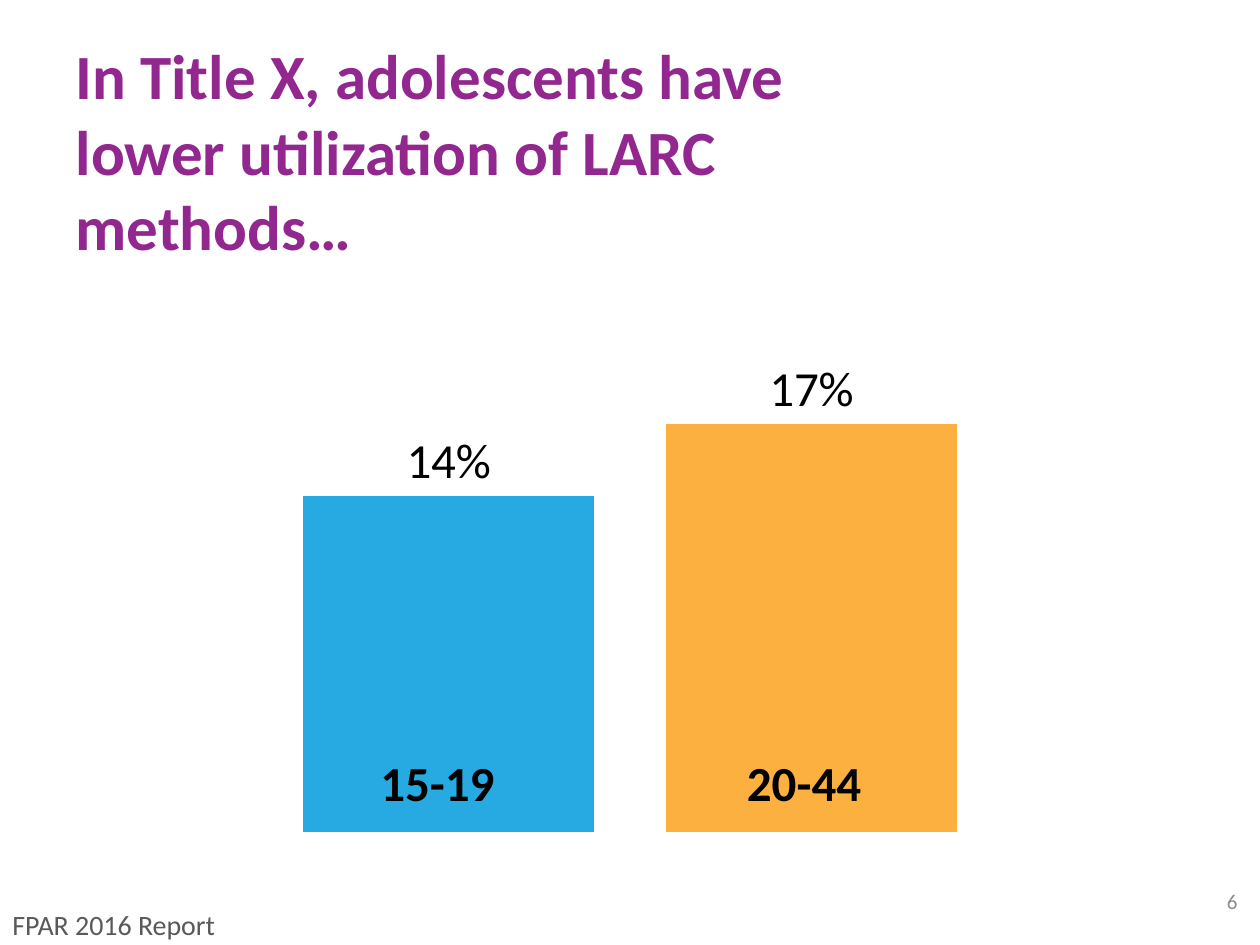
from pptx import Presentation
from pptx.chart.data import CategoryChartData
from pptx.dml.color import RGBColor
from pptx.enum.chart import XL_CHART_TYPE, XL_LABEL_POSITION
from pptx.enum.text import MSO_ANCHOR, PP_ALIGN
from pptx.util import Pt

PX = 9144  # 100 px to the inch
FONT = "Calibri"
AGE_GROUPS = [
    # series, share, colour, age label
    ("Series 1", 0.14, "27AAE1", "15-19"),
    ("Series 2", 0.17, "FBB040", "20-44"),
]


def emu(*lengths):
    return [length * PX for length in lengths]


def color(hex_string):
    return RGBColor.from_string(hex_string)


def style_font(font, size, hex_string, bold=False):
    font.name = FONT
    font.size = Pt(size)
    font.bold = bold
    font.color.rgb = color(hex_string)


def write(frame, text, size, hex_string, bold=False, align=PP_ALIGN.LEFT):
    paragraph = frame.paragraphs[0]
    paragraph.alignment = align
    run = paragraph.add_run()
    run.text = text
    style_font(run.font, size, hex_string, bold)


def add_label(slide, box, text, size, hex_string, bold=False, wrap=False,
              align=PP_ALIGN.LEFT, anchor=MSO_ANCHOR.TOP):
    frame = slide.shapes.add_textbox(*emu(*box)).text_frame
    frame.word_wrap = wrap
    frame.vertical_anchor = anchor
    write(frame, text, size, hex_string, bold, align)


def place_title(slide, box):
    title = slide.shapes.title
    title.left, title.top, title.width, title.height = emu(*box)
    title.text_frame.word_wrap = True
    title.text_frame.vertical_anchor = MSO_ANCHOR.MIDDLE
    write(title.text_frame,
          "In Title X, adolescents have lower utilization of LARC methods…",
          36, "92278F", bold=True)
    # The chart area reaches under the title, so the title goes in front
    slide.shapes._spTree.append(title._element)


def add_larc_chart(slide, box):
    left, top, width, height = box
    data = CategoryChartData(number_format="0%")
    data.categories = ["1"]
    for name, share, _, _ in AGE_GROUPS:
        data.add_series(name, [share])
    chart = slide.shapes.add_chart(
        XL_CHART_TYPE.COLUMN_CLUSTERED, *emu(*box), data).chart
    chart.has_legend = False
    chart.has_title = False
    style_font(chart.font, 28, "000000")

    # Hidden axes
    chart.category_axis.visible = False
    share_axis = chart.value_axis
    share_axis.visible = False
    share_axis.has_major_gridlines = False
    share_axis.minimum_scale = 0
    share_axis.maximum_scale = 0.25
    share_axis.major_unit = 0.25

    # Columns and their values
    plot = chart.plots[0]
    plot.gap_width = 150
    plot.overlap = -25
    plot.vary_by_categories = False
    for series, (_, _, fill, _) in zip(plot.series, AGE_GROUPS):
        series.invert_if_negative = False
        series.format.fill.solid()
        series.format.fill.fore_color.rgb = color(fill)
        labels = series.data_labels
        labels.show_value = True
        labels.number_format = "0%"
        labels.number_format_is_linked = False
        labels.position = XL_LABEL_POSITION.OUTSIDE_END
        style_font(labels.font, 28, "000000")

    # Age labels inside the columns
    for index, (_, _, _, ages) in enumerate(AGE_GROUPS):
        add_label(slide, (left + 242 + 291 * index, top + 417, 125, 67),
                  ages, 28, "000000", bold=True)


def add_footer(slide, box):
    left, top, width, height = box
    add_label(slide, (left, top + 20, 182, 37), "FPAR 2016 Report", 16, "58595B")
    add_label(slide, (left + width - 50, top, 50, 40), "6", 12, "8C8C8C",
              wrap=True, align=PP_ALIGN.RIGHT, anchor=MSO_ANCHOR.MIDDLE)


def main():
    presentation = Presentation()
    presentation.slide_width, presentation.slide_height = emu(1000, 750)
    slide = presentation.slides.add_slide(presentation.slide_layouts[5])
    add_footer(slide, (0, 695, 992, 57))
    add_larc_chart(slide, (50, 175, 900, 495))
    place_title(slide, (50, 30, 658, 178))
    presentation.save("out.pptx")


if __name__ == "__main__":
    main()
